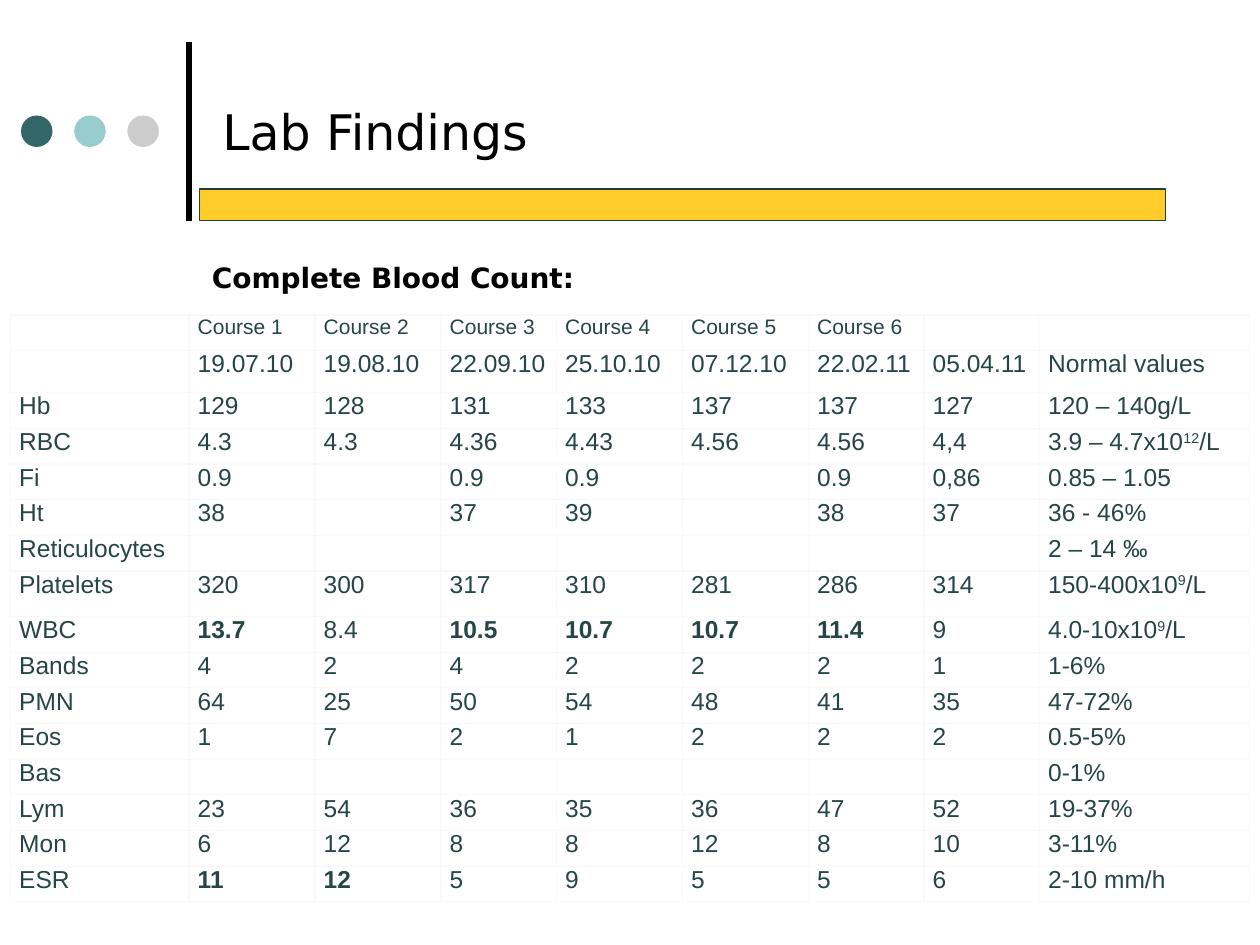
from lxml.etree import SubElement
from pptx import Presentation
from pptx.dml.color import RGBColor
from pptx.enum.shapes import MSO_CONNECTOR, MSO_SHAPE
from pptx.enum.text import MSO_ANCHOR
from pptx.oxml.ns import qn
from pptx.util import Pt

TITLE = "Lab Findings"
SUBTITLE = "Complete Blood Count:"

# Text between ^ marks is superscript.
BLOOD_COUNT = [
    ["", "Course 1", "Course 2", "Course 3", "Course 4", "Course 5", "Course 6", "", ""],
    ["", "19.07.10", "19.08.10", "22.09.10", "25.10.10", "07.12.10", "22.02.11", "05.04.11",
     "Normal values"],
    ["Hb", "129", "128", "131", "133", "137", "137", "127", "120 – 140g/L"],
    ["RBC", "4.3", "4.3", "4.36", "4.43", "4.56", "4.56", "4,4", "3.9 – 4.7х10^12^/L"],
    ["Fi", "0.9", "", "0.9", "0.9", "", "0.9", "0,86", "0.85 – 1.05"],
    ["Ht", "38", "", "37", "39", "", "38", "37", "36 - 46%"],
    ["Reticulocytes", "", "", "", "", "", "", "", "2 – 14 ‰"],
    ["Platelets", "320", "300", "317", "310", "281", "286", "314", "150-400х10^9^/L"],
    ["WBC", "13.7", "8.4", "10.5", "10.7", "10.7", "11.4", "9", "4.0-10х10^9^/L"],
    ["Bands", "4", "2", "4", "2", "2", "2", "1", "1-6%"],
    ["PMN", "64", "25", "50", "54", "48", "41", "35", "47-72%"],
    ["Eos", "1", "7", "2", "1", "2", "2", "2", "0.5-5%"],
    ["Bas", "", "", "", "", "", "", "", "0-1%"],
    ["Lym", "23", "54", "36", "35", "36", "47", "52", "19-37%"],
    ["Mon", "6", "12", "8", "8", "12", "8", "10", "3-11%"],
    ["ESR", "11", "12", "5", "9", "5", "5", "6", "2-10 mm/h"],
]
BOLD_COLUMNS = {"WBC": {1, 3, 4, 5, 6}, "ESR": {1, 2}}

COLUMN_WIDTHS = [102, 72, 72, 66, 72, 72, 66, 66, 120]
ROW_HEIGHT = 20.4
TALL_ROWS = {1: 24, 7: 26}

COLORS = {
    "ink": "000000", "table_text": "264545", "grid": "F9F9F9",
    "bar": "FFCC29", "bar_line": "204040",
}
DOT_COLORS = ["336666", "99CCCC", "CCCCCC"]
HEADING_FONT, TABLE_FONT = "DejaVu Sans", "Arial"


def rgb(name):
    return RGBColor.from_string(COLORS.get(name, name))


def style_run(run, font_name, size, color, bold=False):
    run.font.name = font_name
    run.font.size = Pt(size)
    run.font.color.rgb = rgb(color)
    run.font.bold = bold


def add_heading(slide, text, box, size, anchor, bold=False):
    frame = slide.shapes.add_textbox(*map(Pt, box)).text_frame
    frame.word_wrap = True
    frame.vertical_anchor = anchor
    paragraph = frame.paragraphs[0]
    paragraph.text = text
    style_run(paragraph.runs[0], HEADING_FONT, size, "ink", bold)
    return paragraph


def add_filled(slide, preset, box, fill, line=None):
    shape = slide.shapes.add_shape(preset, *map(Pt, box))
    shape.shadow.inherit = False
    shape.fill.solid()
    shape.fill.fore_color.rgb = rgb(fill)
    if line:
        shape.line.color.rgb = rgb(line)
        shape.line.width = Pt(0.75)
    else:
        shape.line.fill.background()


def add_borders(cell):
    properties = cell._tc.get_or_add_tcPr()
    for side in ("a:lnL", "a:lnR", "a:lnT", "a:lnB"):
        border = SubElement(properties, qn(side), w=str(Pt(0.75)))
        fill = SubElement(border, qn("a:solidFill"))
        SubElement(fill, qn("a:srgbClr"), val=COLORS["grid"])


def fill_cell(cell, text, size, bold):
    cell.margin_left = cell.margin_right = Pt(5)
    cell.margin_top = cell.margin_bottom = 0
    add_borders(cell)
    cell.fill.background()
    paragraph = cell.text_frame.paragraphs[0]
    if not text:
        SubElement(paragraph._p, qn("a:endParaRPr"), sz=str(size * 100))
        return
    for index, part in enumerate(text.split("^")):
        run = paragraph.add_run()
        run.text = part
        style_run(run, TABLE_FONT, size, "table_text", bold)
        if index % 2:
            run.font._element.set("baseline", "30000")


def add_blood_count(slide):
    heights = [TALL_ROWS.get(row, ROW_HEIGHT) for row in range(len(BLOOD_COUNT))]
    table = slide.shapes.add_table(
        len(heights), len(COLUMN_WIDTHS),
        Pt(6), Pt(180), Pt(sum(COLUMN_WIDTHS)), Pt(sum(heights))).table
    table.first_row = table.horz_banding = False
    for column, width in zip(table.columns, COLUMN_WIDTHS):
        column.width = Pt(width)
    for r, (values, height) in enumerate(zip(BLOOD_COUNT, heights)):
        table.rows[r].height = Pt(height)
        bold_columns = BOLD_COLUMNS.get(values[0], set())
        for c, value in enumerate(values):
            fill_cell(table.cell(r, c), value, 14 if r else 12, c in bold_columns)


def main():
    deck = Presentation()
    deck.slide_width, deck.slide_height = Pt(720), Pt(540)
    slide = deck.slides.add_slide(deck.slide_layouts[6])

    rule = slide.shapes.add_connector(
        MSO_CONNECTOR.STRAIGHT, Pt(108), Pt(126), Pt(108), Pt(24))
    rule.line.color.rgb = rgb("ink")
    rule.line.width = Pt(3)
    SubElement(rule._element.spPr, qn("a:effectLst"))

    for index, color in enumerate(DOT_COLORS):
        add_filled(slide, MSO_SHAPE.OVAL, (12 + 30.4 * index, 66, 18, 18), color)

    add_heading(slide, TITLE, (120, 15, 672, 120)[:2] + (552, 120), 28, MSO_ANCHOR.MIDDLE)
    subtitle = add_heading(slide, SUBTITLE, (114, 126, 564, 372), 16, MSO_ANCHOR.TOP, bold=True)
    subtitle.line_spacing = 2.0

    add_blood_count(slide)
    add_filled(slide, MSO_SHAPE.RECTANGLE, (114, 108, 552, 18), "bar", "bar_line")
    deck.save("out.pptx")


if __name__ == "__main__":
    main()
